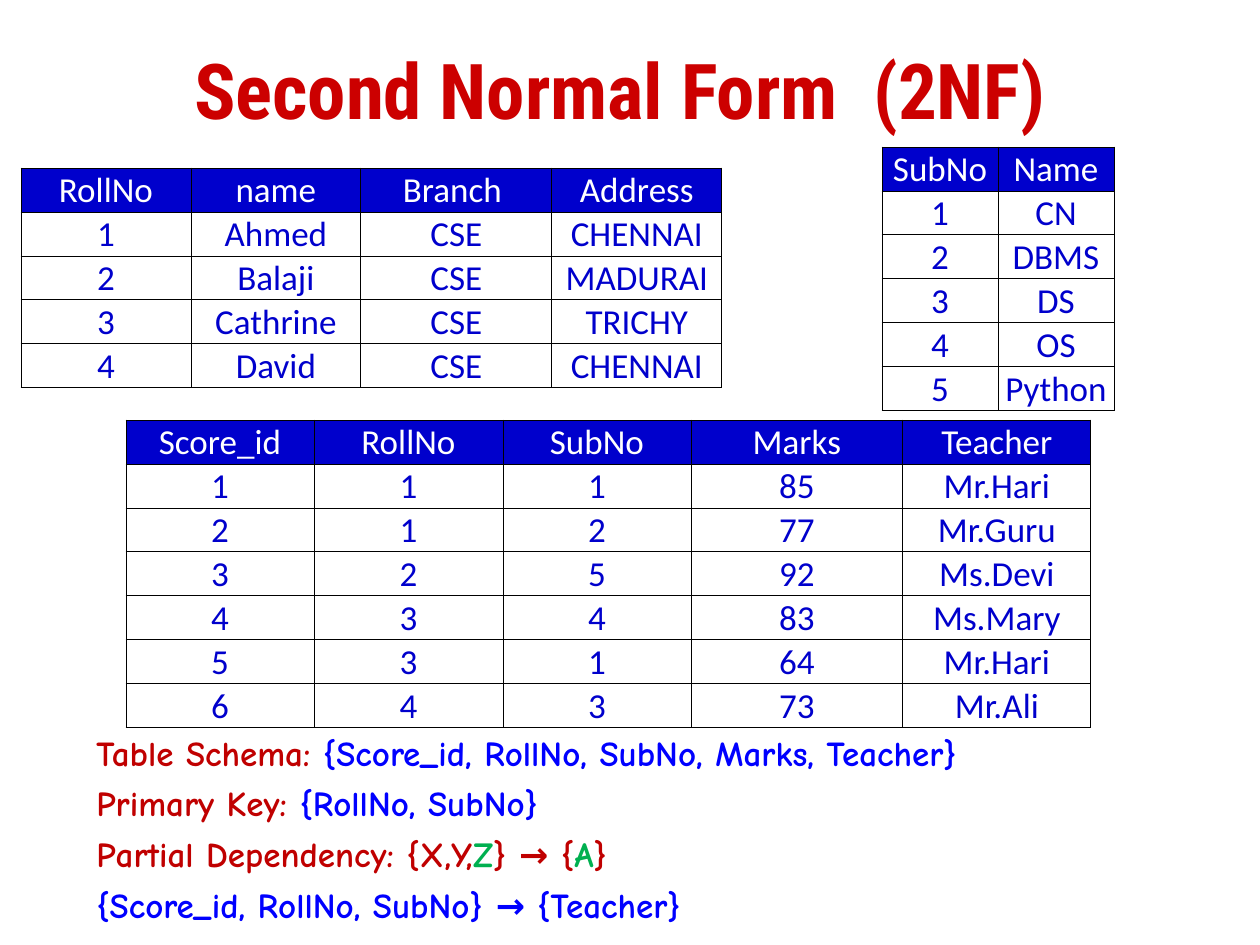
"""Build the Second Normal Form slide with its three relations and dependency statements."""
import lxml.etree
import pptx
import pptx.dml.color
import pptx.enum.text
import pptx.oxml.ns
import pptx.util
from dataclasses import dataclass


@dataclass(frozen=True)
class Theme:
    title: str = "CC0000"
    table: str = "0000CC"
    header_text: str = "FFFFFF"
    border: str = "000000"
    label: str = "C00000"
    value: str = "0000FF"
    accent: str = "00B050"
    title_font: str = "Roboto Condensed"
    table_font: str = "Calibri"
    statement_font: str = "Comic Neue"
    title_size: int = 44
    body_size: int = 20
    statement_gap: int = 5
    border_width: float = 0.5


THEME = Theme()
SLIDE_SIZE = (1260, 945)
TITLE = "Second Normal Form  (2NF) "
TITLE_BOX = (94, 10, 1071, 158)
STATEMENTS_BOX = (84, 725, 1056, 208)
ROW_HEIGHT = 44

RELATIONS = [
    {"at": (21, 168), "columns": (170, 170, 191, 170), "rows": [
        ("RollNo", "name", "Branch ", "Address"),
        ("1", "Ahmed", "CSE", "CHENNAI"),
        ("2", "Balaji", "CSE", "MADURAI"),
        ("3", "Cathrine", "CSE", "TRICHY"),
        ("4", "David", "CSE", "CHENNAI")]},
    {"at": (882, 147), "columns": (116, 116), "rows": [
        ("SubNo", "Name"),
        ("1", "CN"),
        ("2", "DBMS"),
        ("3", "DS"),
        ("4", "OS"),
        ("5", "Python")]},
    {"at": (126, 420), "columns": (188, 189, 188, 212, 188), "rows": [
        ("Score_id", "RollNo", "SubNo", "Marks", "Teacher"),
        ("1", "1", "1", "85", "Mr.Hari"),
        ("2", "1", "2", "77", "Mr.Guru"),
        ("3", "2", "5", "92", "Ms.Devi"),
        ("4", "3", "4", "83", "Ms.Mary"),
        ("5", "3", "1", "64", "Mr.Hari"),
        ("6", "4", "3", "73", "Mr.Ali")]},
]

STATEMENTS = [
    [("Table Schema:", THEME.label),
     (" {Score_id, RollNo, SubNo, Marks, Teacher}", THEME.value)],
    [("Primary Key:", THEME.label), (" {RollNo, SubNo}", THEME.value)],
    [("Partial Dependency: {X,Y,", THEME.label), ("Z", THEME.accent),
     ("} → {", THEME.label), ("A", THEME.accent), ("}", THEME.label)],
    [("{Score_id, RollNo, SubNo} → {Teacher}", THEME.value)],
]


def px(length):
    return pptx.util.Emu(round(length * 914400 / 126))


def style(run, font, size, color, bold=False):
    run.font.name = font
    run.font.size = pptx.util.Pt(size)
    run.font.bold = bold
    run.font.color.rgb = pptx.dml.color.RGBColor.from_string(color)


def add_borders(cell):
    properties = cell._tc.get_or_add_tcPr()
    qn = pptx.oxml.ns.qn
    for position, side in enumerate(("lnL", "lnR", "lnT", "lnB")):
        line = lxml.etree.Element(qn(f"a:{side}"), w=str(pptx.util.Pt(THEME.border_width)))
        fill = lxml.etree.SubElement(line, qn("a:solidFill"))
        lxml.etree.SubElement(fill, qn("a:srgbClr"), val=THEME.border)
        properties.insert(position, line)


def fill_cell(cell, text, is_header):
    cell.text = text
    cell.vertical_anchor = pptx.enum.text.MSO_ANCHOR.BOTTOM
    cell.margin_left = cell.margin_right = cell.margin_top = px(1)
    cell.margin_bottom = 0
    if is_header:
        cell.fill.solid()
        cell.fill.fore_color.rgb = pptx.dml.color.RGBColor.from_string(THEME.table)
    else:
        cell.fill.background()
    add_borders(cell)
    paragraph = cell.text_frame.paragraphs[0]
    paragraph.alignment = pptx.enum.text.PP_ALIGN.CENTER
    color = THEME.header_text if is_header else THEME.table
    style(paragraph.runs[0], THEME.table_font, THEME.body_size, color)


def add_relation(slide, relation):
    rows, columns = relation["rows"], relation["columns"]
    box = (*relation["at"], sum(columns), ROW_HEIGHT * len(rows))
    table = slide.shapes.add_table(len(rows), len(columns), *map(px, box)).table
    table.first_row = table.horz_banding = False
    for column, width in zip(table.columns, columns):
        column.width = px(width)
    for row_index, row in enumerate(rows):
        for column_index, text in enumerate(row):
            fill_cell(table.cell(row_index, column_index), text, row_index == 0)


def add_title(slide):
    title = slide.shapes.title
    title.left, title.top, title.width, title.height = map(px, TITLE_BOX)
    title.text_frame.text = TITLE
    title.text_frame.vertical_anchor = pptx.enum.text.MSO_ANCHOR.MIDDLE
    heading = title.text_frame.paragraphs[0]
    heading.alignment = pptx.enum.text.PP_ALIGN.CENTER
    style(heading.runs[0], THEME.title_font, THEME.title_size, THEME.title, True)


def add_statements(slide):
    frame = slide.shapes.add_textbox(*map(px, STATEMENTS_BOX)).text_frame
    frame.word_wrap = False
    frame.auto_size = pptx.enum.text.MSO_AUTO_SIZE.SHAPE_TO_FIT_TEXT
    for index, statement in enumerate(STATEMENTS):
        paragraph = frame.add_paragraph() if index else frame.paragraphs[0]
        paragraph.space_before = pptx.util.Pt(THEME.statement_gap)
        for text, color in statement:
            run = paragraph.add_run()
            run.text = text
            style(run, THEME.statement_font, THEME.body_size, color, True)


def main():
    deck = pptx.Presentation()
    deck.slide_width, deck.slide_height = map(px, SLIDE_SIZE)
    slide = deck.slides.add_slide(deck.slide_layouts[5])
    add_title(slide)
    for relation in RELATIONS:
        add_relation(slide, relation)
    add_statements(slide)
    deck.save("out.pptx")


if __name__ == "__main__":
    main()
